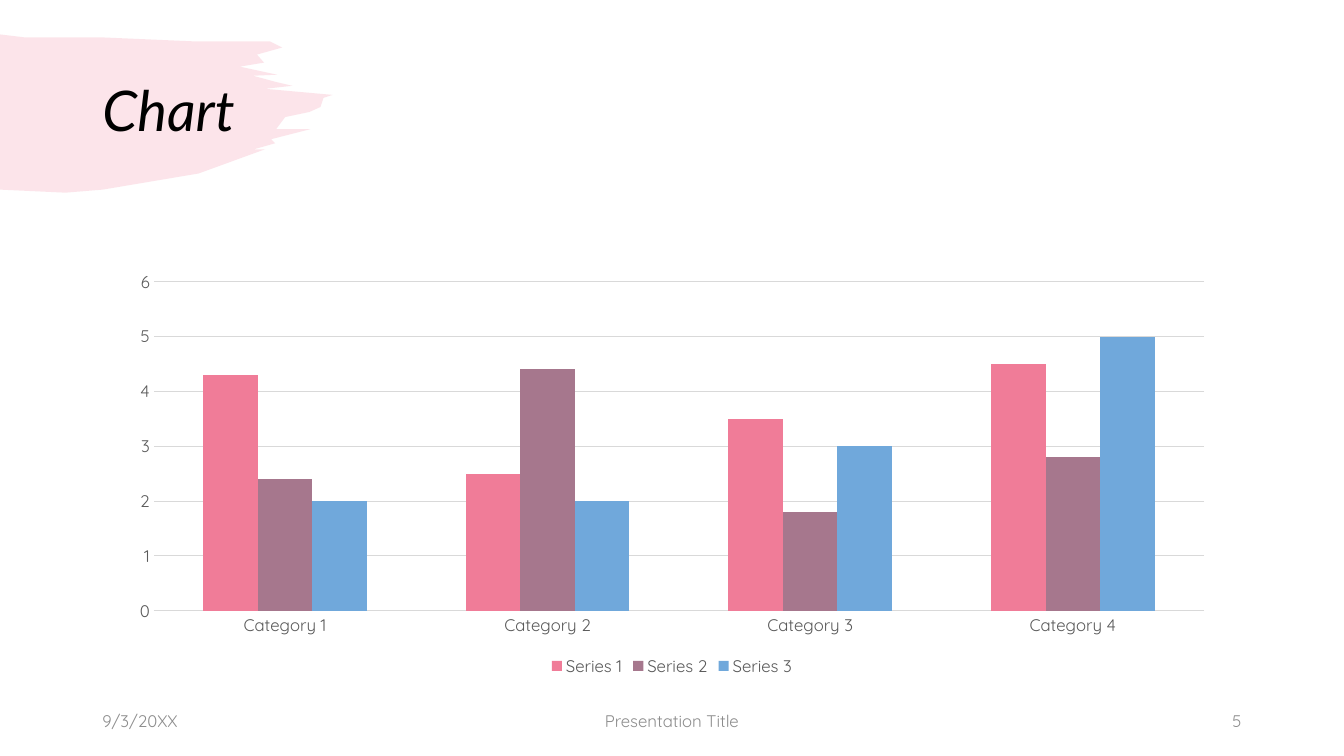
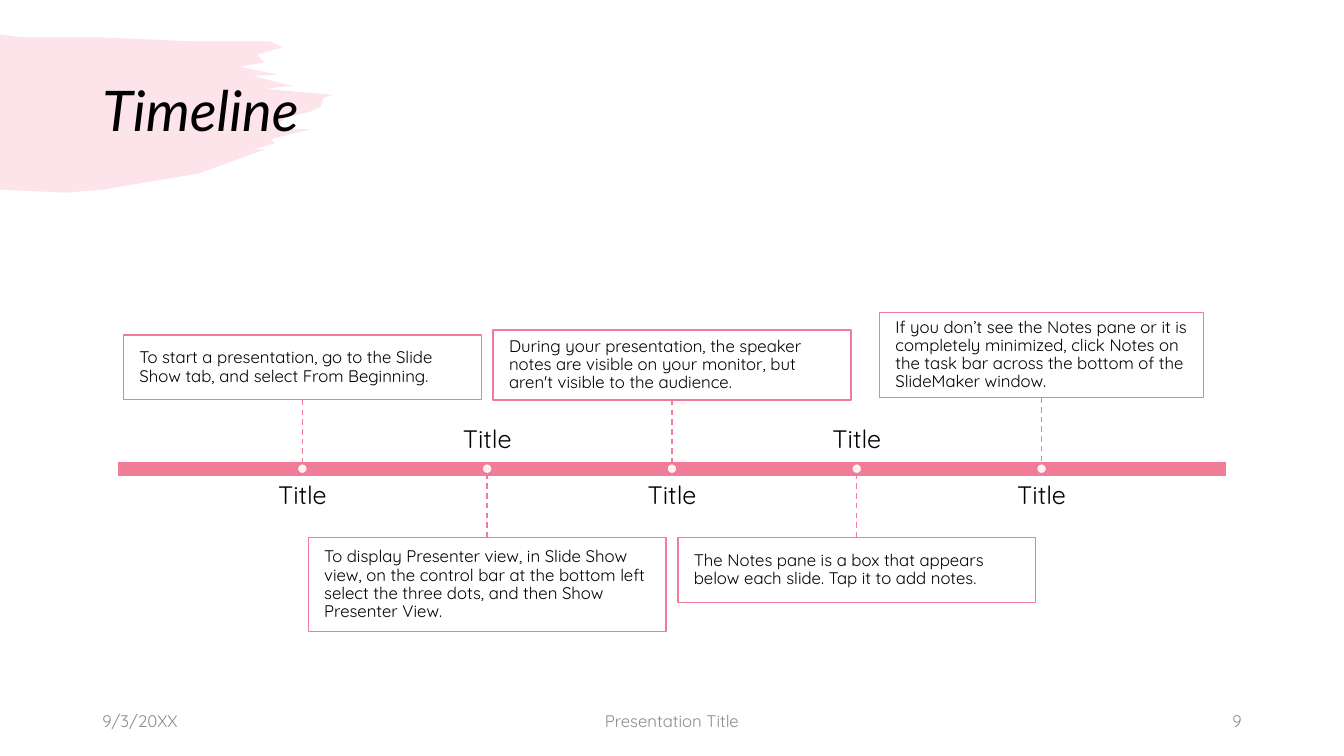
from lxml import etree
from pptx import Presentation
from pptx.chart.data import CategoryChartData
from pptx.dml.color import RGBColor
from pptx.enum.chart import XL_CHART_TYPE, XL_LEGEND_POSITION, XL_TICK_MARK
from pptx.enum.dml import MSO_LINE
from pptx.enum.shapes import MSO_CONNECTOR, MSO_SHAPE
from pptx.enum.text import MSO_ANCHOR, MSO_AUTO_SIZE, PP_ALIGN
from pptx.oxml.ns import qn
from pptx.util import Emu, Pt

COLUMNS, ROWS, UNIT = 160, 90, 76200
COLORS = {"pink": "F07C98", "mauve": "A6778D", "blue": "70A8DB", "white": "FFFFFF",
          "black": "000000", "label": "595959", "grid": "D9D9D9", "footer": "8C8C8C"}
TITLE_FONT, BODY_FONT = "Lato", "Quicksand"
RECT, OVAL = MSO_SHAPE.RECTANGLE, MSO_SHAPE.OVAL
STRAIGHT, DASH = MSO_CONNECTOR.STRAIGHT, MSO_LINE.DASH
COLUMN, LEGEND_BOTTOM = XL_CHART_TYPE.COLUMN_CLUSTERED, XL_LEGEND_POSITION.BOTTOM
NO_TICK, NO_FIT = XL_TICK_MARK.NONE, MSO_AUTO_SIZE.NONE
TOP, MIDDLE, BOTTOM = MSO_ANCHOR.TOP, MSO_ANCHOR.MIDDLE, MSO_ANCHOR.BOTTOM
LEFT, CENTER, RIGHT = PP_ALIGN.LEFT, PP_ALIGN.CENTER, PP_ALIGN.RIGHT

BRUSH_BOX = (0, 4.1, 39.6, 18.8)
TITLE_BOX = (11, 4.8, 138, 17.4)
FOOTER_BOX = (11, 83.4, 138, 4.8)
CHART_BOX = (14, 31.3, 132, 49.7)
TIMELINE_BOX = (14, 37.2, 132, 37.2)

BRUSH_WIDTH = 330
BRUSH_OUTLINE = [
    (0, 0), (25, 3), (102, 3), (194, 7), (268, 7), (280, 13), (255, 20), (262, 28),
    (238, 32), (275, 40), (251, 41), (273, 47), (290, 51), (263, 54), (330, 60),
    (321, 63), (318, 72), (307, 77), (283, 82), (274, 94), (308, 94), (269, 104),
    (273, 108), (252, 114), (263, 114), (197, 138), (102, 154), (65, 157), (0, 154)]

CATEGORIES = [f"Category {n}" for n in range(1, 5)]
SERIES = [("Series 1", (4.3, 2.5, 3.5, 4.5), "pink"),
          ("Series 2", (2.4, 4.4, 1.8, 2.8), "mauve"),
          ("Series 3", (2, 2, 3, 5), "blue")]
MILESTONES = [
    ("To start a presentation, go to the Slide Show tab, and select From Beginning.",
     42.6, 7.7, 8.2),
    ("To display Presenter view, in Slide Show view, on the control bar at the bottom left "
     "select the three dots, and then Show Presenter View.", 42.6, 11.2, 8.2),
    ("During your presentation, the speaker notes are visible on your monitor, but aren't "
     "visible to the audience.", 42.6, 8.3, 8.2),
    ("The Notes pane is a box that appears below each slide. Tap it to add notes.",
     42.6, 7.7, 8.2),
    ("If you don’t see the Notes pane or it is completely minimized, click Notes on the "
     "task bar across the bottom of the SlideMaker window.", 38.6, 10.1, 8.5)]


def grid(*cells):
    """Turn grid cells into lengths."""
    return [Emu(round(c * UNIT)) for c in cells]


def rgb(name):
    """Look up a colour."""
    return RGBColor.from_string(COLORS[name])


def set_font(font, size, color, name=BODY_FONT):
    """Format a font."""
    font.size, font.name = Pt(size), name
    font.color.rgb = rgb(color)


def set_line(line, color, width):
    """Give a line its colour and width."""
    line.color.rgb, line.width = rgb(color), Pt(width)


def set_fill(sp, color, opacity=100):
    """Fill a shape, with transparency if asked, and drop its shadow."""
    sp.shadow.inherit = False
    sp.fill.solid()
    sp.fill.fore_color.rgb = rgb(color)
    if opacity < 100:
        clr = sp.element.spPr.find(qn("a:solidFill"))[0]
        etree.SubElement(clr, qn("a:alpha"), val=str(opacity * 1000))


def write(sp, text, size, color, align=LEFT, anchor=MIDDLE, inset=(1.2, 0.6),
          spacing=None, font=BODY_FONT):
    """Set one formatted paragraph in a shape and return its run."""
    tf = sp.text_frame
    tf.word_wrap, tf.auto_size, tf.vertical_anchor = True, NO_FIT, anchor
    across, down = grid(*inset)
    tf.margin_left = tf.margin_right = across
    tf.margin_top = tf.margin_bottom = down
    p = tf.paragraphs[0]
    p.alignment = align
    if spacing:
        p.line_spacing = spacing
    r = p.add_run()
    r.text = text
    set_font(r.font, size, color, font)
    return r


def add_brush(s, box):
    """Paint the pale brush stroke behind the title."""
    x, y, w, _ = grid(*box)
    builder = s.shapes.build_freeform(*BRUSH_OUTLINE[0], scale=w / BRUSH_WIDTH)
    builder.add_line_segments(BRUSH_OUTLINE[1:], close=True)
    sp = builder.convert_to_shape(x, y)
    set_fill(sp, "pink", 20)
    sp.line.fill.background()
    s.shapes.title.element.addprevious(sp.element)


def add_title(s, box, text):
    """Move and format the title placeholder."""
    title = s.shapes.title
    title.left, title.top, title.width, title.height = grid(*box)
    r = write(title, text, 40, "black", spacing=0.9, font=TITLE_FONT)
    r.font.italic = True


def add_footer(s, box, number):
    """Place date, presentation title and slide number along the foot."""
    x, y, w, h = box
    side, center = 36, 54
    parts = [("9/3/20XX", x, side, LEFT),
             ("Presentation Title", x + (w - center) / 2, center, CENTER),
             (str(number), x + w - side, side, RIGHT)]
    for text, left, width, align in parts:
        write(s.shapes.add_textbox(*grid(left, y, width, h)), text, 12, "footer", align)


def add_base_slide(prs, title, number):
    """Start a slide with the shared brush, title and footer."""
    s = prs.slides.add_slide(prs.slide_layouts[5])
    add_title(s, TITLE_BOX, title)
    add_brush(s, BRUSH_BOX)
    add_footer(s, FOOTER_BOX, number)
    return s


def add_column_chart(s, box):
    """Draw the clustered column chart."""
    data = CategoryChartData()
    data.categories = CATEGORIES
    for name, values, _ in SERIES:
        data.add_series(name, values)
    chart = s.shapes.add_chart(COLUMN, *grid(*box), data).chart
    set_font(chart.font, 10, "black")
    chart.has_title = False
    chart.has_legend = True
    chart.legend.position, chart.legend.include_in_layout = LEGEND_BOTTOM, False
    set_font(chart.legend.font, 12, "label")
    plot = chart.plots[0]
    plot.gap_width, plot.overlap, plot.vary_by_categories = 182, 0, False
    for series, (_, _, color) in zip(plot.series, SERIES):
        series.format.fill.solid()
        series.format.fill.fore_color.rgb = rgb(color)
    for axis in (chart.category_axis, chart.value_axis):
        axis.major_tick_mark = axis.minor_tick_mark = NO_TICK
        set_font(axis.tick_labels.font, 12, "label")
    set_line(chart.category_axis.format.line, "grid", 0.75)
    axis = chart.value_axis
    axis.minimum_scale, axis.maximum_scale, axis.major_unit = 0, 6, 1
    axis.format.line.fill.background()
    set_line(axis.major_gridlines.format.line, "grid", 0.75)


def add_milestone(s, x, axis_y, above, milestone):
    """Place a note, its dashed stem, its dot and the label across the axis."""
    text, w, h, gap = milestone
    label_w, label_h, label_gap, dot = 35.2, 5, 1.7, 1.2
    top = axis_y - gap - h if above else axis_y + gap
    note = s.shapes.add_shape(RECT, *grid(x - w / 2, top, w, h))
    set_fill(note, "white", 90)
    set_line(note.line, "pink", 1)
    write(note, text, 12, "black", inset=(1.9, 0.4), spacing=0.9)

    stem = s.shapes.add_connector(STRAIGHT, *grid(x, axis_y, x, axis_y))
    stem.begin_connect(note, 2 if above else 0)
    set_line(stem.line, "pink", 1)
    stem.line.dash_style = DASH
    etree.SubElement(stem.element.spPr, qn("a:effectLst"))

    marker = s.shapes.add_shape(OVAL, *grid(x - dot / 2, axis_y - dot / 2, dot, dot))
    set_fill(marker, "white", 90)
    set_line(marker.line, "pink", 1)

    label_y = axis_y + label_gap if above else axis_y - label_gap - label_h
    label = s.shapes.add_textbox(*grid(x - label_w / 2, label_y, label_w, label_h))
    write(label, "Title", 18, "black", CENTER, TOP if above else BOTTOM, (0, 0), 0.9)


def add_timeline(s, box):
    """Draw the axis bar with milestones alternating above and below."""
    x, y, w, h = box
    axis_y, bar_h = y + h / 2, 1.8
    bar = s.shapes.add_shape(RECT, *grid(x, axis_y - bar_h / 2, w, bar_h))
    set_fill(bar, "pink")
    set_line(bar.line, "white", 1)
    step = w / (len(MILESTONES) + 1)
    for i, milestone in enumerate(MILESTONES):
        add_milestone(s, x + step * (i + 1), axis_y, i % 2 == 0, milestone)


def main():
    """Build and save the presentation."""
    prs = Presentation()
    prs.slide_width, prs.slide_height = grid(COLUMNS, ROWS)
    add_column_chart(add_base_slide(prs, "Chart", 5), CHART_BOX)
    add_timeline(add_base_slide(prs, "Timeline", 9), TIMELINE_BOX)
    prs.save("out.pptx")


if __name__ == "__main__":
    main()
